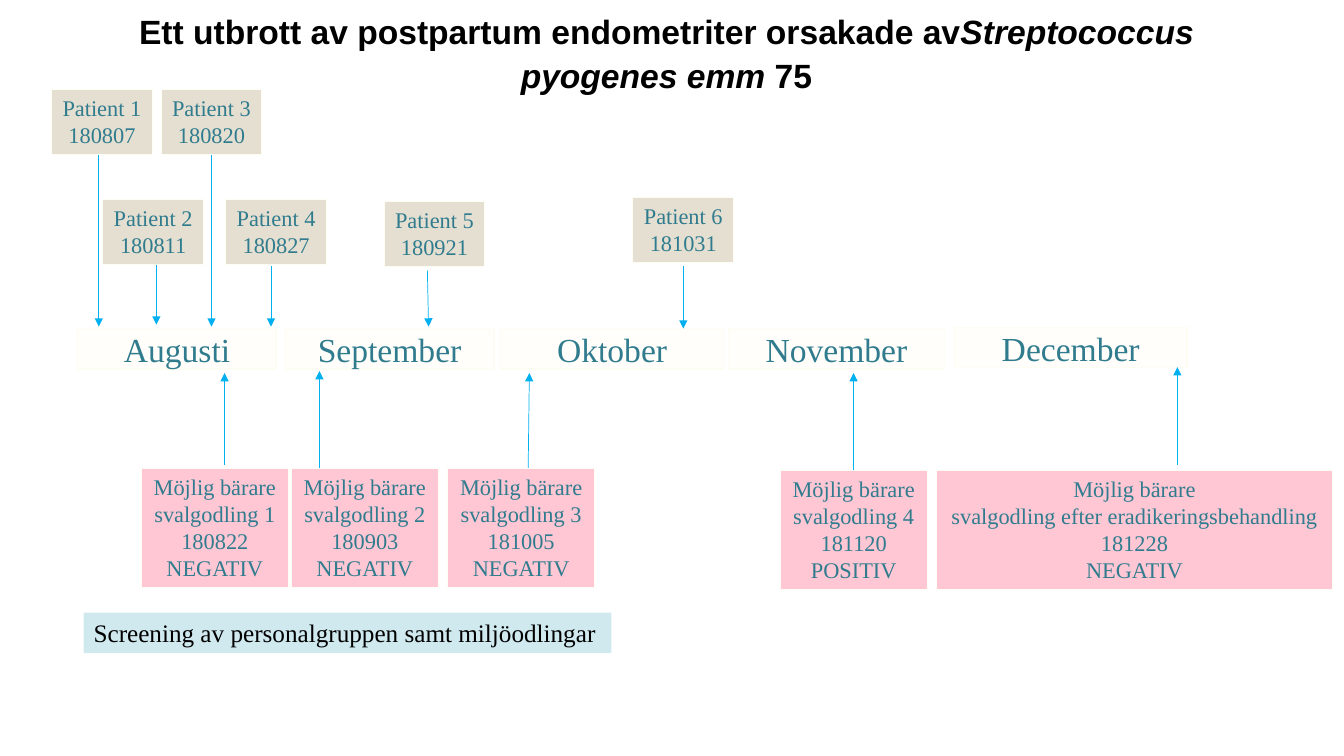
from lxml import etree
from pptx import Presentation
from pptx.dml.color import RGBColor
from pptx.enum.shapes import MSO_CONNECTOR, MSO_SHAPE
from pptx.enum.text import MSO_ANCHOR, MSO_AUTO_SIZE, PP_ALIGN
from pptx.oxml.ns import qn
from pptx.util import Cm, Pt

RECT = MSO_SHAPE.RECTANGLE
STRAIGHT = MSO_CONNECTOR.STRAIGHT
TOP, MIDDLE = MSO_ANCHOR.TOP, MSO_ANCHOR.MIDDLE
GROW, FIXED = MSO_AUTO_SIZE.SHAPE_TO_FIT_TEXT, MSO_AUTO_SIZE.NONE
LEFT, CENTER = PP_ALIGN.LEFT, PP_ALIGN.CENTER

COLORS = {
    "text": "307C8E", "black": "000000", "border": "FEFDF4", "month": "FFFEFA",
    "patient": "E5DFD1", "culture": "FFC7D4", "screening": "CFE9EF", "arrow": "00B0F0",
}
SERIF = "Times New Roman"

MONTHS = [
    ("Augusti", 1.96, 8.28, 5.0),
    ("September", 7.19, 8.28, 5.26),
    ("Oktober", 12.62, 8.28, 5.61),
    ("November", 18.36, 8.28, 5.44),
    ("December", 24.05, 8.25, 5.87),
]
PATIENTS = [
    ("180807", 1.3, 2.26, (2.49, 3.89, 2.49, 8.23)),
    ("180811", 2.59, 5.03, (3.94, 6.65, 3.94, 8.18)),
    ("180820", 4.06, 2.26, (5.33, 3.81, 5.33, 8.23)),
    ("180827", 5.69, 5.03, (6.83, 6.71, 6.83, 8.23)),
    ("180921", 9.68, 5.08, (10.77, 6.81, 10.8, 8.23)),
    ("181031", 15.95, 4.98, (17.22, 6.71, 17.22, 8.28)),
]
CULTURES = [
    ("1\n180822\nNEGATIV", 3.56, 11.81, 3.71, (5.66, 11.71, 5.66, 9.4)),
    ("2\n180903\nNEGATIV", 7.34, 11.81, 3.71, (8.05, 11.81, 8.05, 9.35)),
    ("3\n181005\nNEGATIV", 11.28, 11.81, 3.71, (13.31, 11.84, 13.34, 9.4)),
    ("4\n181120\nPOSITIV", 19.66, 11.86, 3.71, (21.51, 11.86, 21.51, 9.4)),
    ("efter eradikeringsbehandling\n181228\nNEGATIV", 23.6, 11.86, 9.98,
     (29.67, 11.71, 29.67, 9.25)),
]


class TimelineSlide:
    """Draws the parts of an outbreak timeline on one slide."""

    def __init__(self, slide):
        self.shapes = slide.shapes

    def color(self, name):
        return RGBColor.from_string(COLORS[name])

    def apply(self, target, formats):
        for attribute, value in formats.items():
            setattr(target, attribute, value)

    def style_runs(self, paragraph, size, color, font=SERIF, bold=False):
        for run in paragraph.runs:
            self.apply(run.font, {"name": font, "size": Pt(size), "bold": bold})
            run.font.color.rgb = self.color(color)

    def box(self, text, place, fill, size=16, color="text", border=0.75,
            align=CENTER, anchor=TOP, fit=GROW, wrap=False):
        box = self.shapes.add_shape(RECT, *map(Cm, place))
        box.shadow.inherit = False
        box.fill.solid()
        box.fill.fore_color.rgb = self.color(fill)
        if border:
            box.line.color.rgb = self.color("border")
            box.line.width = Pt(border)
        else:
            box.line.fill.background()
        self.apply(box.text_frame, {
            "word_wrap": wrap, "auto_size": fit, "vertical_anchor": anchor})
        paragraph = box.text_frame.paragraphs[0]
        self.apply(paragraph, {"text": text, "alignment": align})
        self.style_runs(paragraph, size, color)

    def arrow(self, ends):
        arrow = self.shapes.add_connector(STRAIGHT, *map(Cm, ends))
        arrow.line.color.rgb = self.color("arrow")
        arrow.line.width = Pt(0.5)
        etree.SubElement(arrow.line._get_or_add_ln(), qn("a:tailEnd"), type="triangle")
        etree.SubElement(arrow._element.spPr, qn("a:effectLst"))

    def title(self, parts, place):
        title = self.shapes.add_textbox(*map(Cm, place))
        self.apply(title.text_frame, {
            "word_wrap": True, "auto_size": FIXED, "vertical_anchor": MIDDLE})
        paragraph = title.text_frame.paragraphs[0]
        self.apply(paragraph, {"alignment": CENTER, "line_spacing": 1.1})
        for text, italic in parts:
            run = paragraph.add_run()
            run.text = text
            run.font.italic = italic
        self.style_runs(paragraph, 24, "black", "Arial", True)


def main():
    presentation = Presentation()
    presentation.slide_width, presentation.slide_height = Cm(33.87), Cm(19.05)
    timeline = TimelineSlide(presentation.slides.add_slide(presentation.slide_layouts[6]))

    timeline.title([
        ("Ett utbrott av postpartum endometriter orsakade av", False),
        ("Streptococcus pyogenes emm", True),
        (" 75", False),
    ], (2.24, 0, 29.11, 2.59))
    for month, left, top, width in MONTHS:
        timeline.box(month, (left, top, width, 1.02), "month", size=24, border=1,
                     anchor=MIDDLE, fit=FIXED, wrap=True)
    for number, (date, left, top, ends) in enumerate(PATIENTS, 1):
        timeline.arrow(ends)
        timeline.box(f"Patient {number}\n{date}", (left, top, 2.54, 1.63), "patient")
    for details, left, top, width, ends in CULTURES:
        timeline.arrow(ends)
        timeline.box(f"Möjlig bärare\nsvalgodling {details}", (left, top, width, 3), "culture")
    timeline.box("Screening av personalgruppen samt miljöodlingar", (2.11, 15.44, 13.3, 1.02),
                 "screening", size=18, color="black", border=0, align=LEFT, wrap=True)

    presentation.save("out.pptx")


if __name__ == "__main__":
    main()
